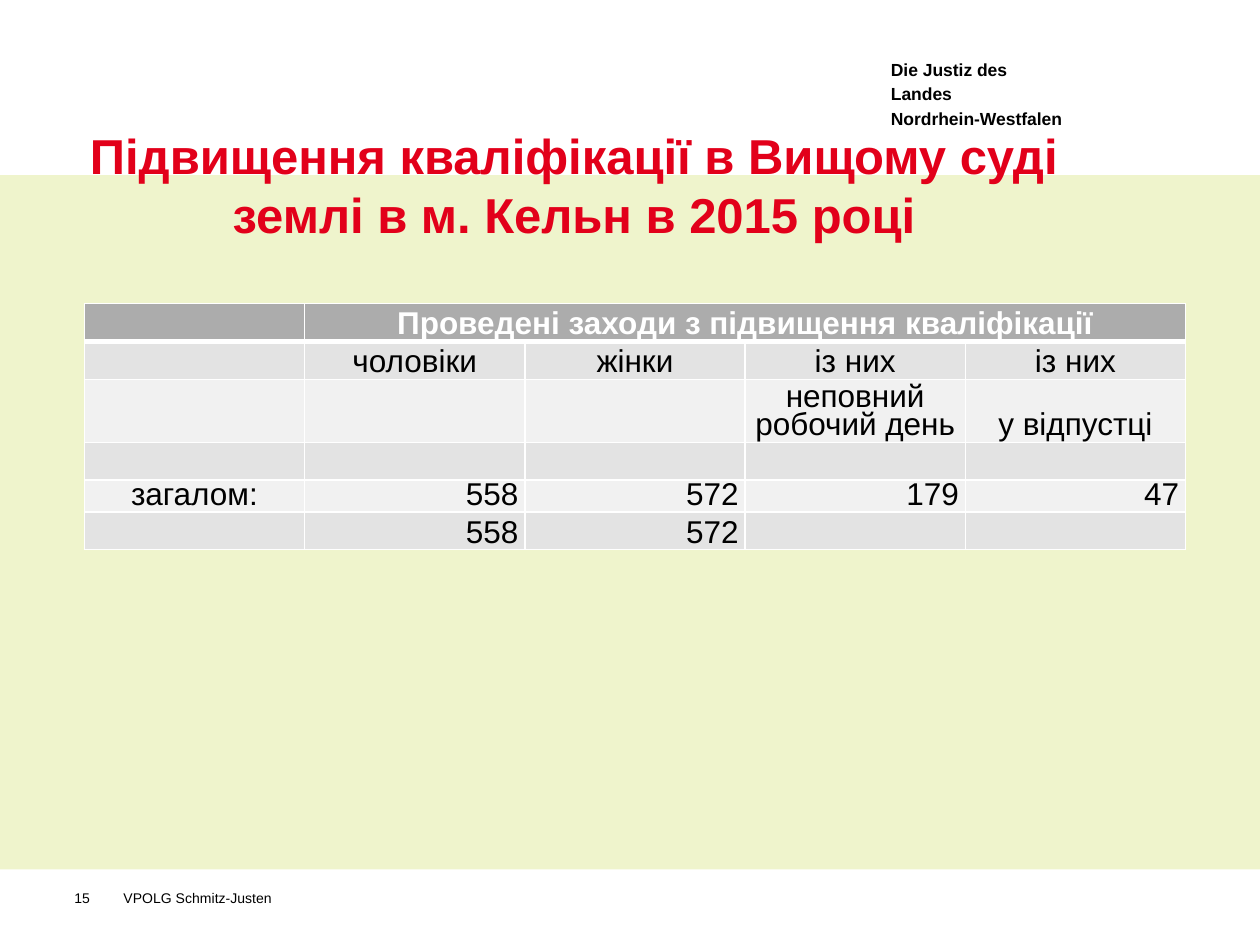
"""Build the slide on training at the Higher Regional Court of Cologne in 2015."""
from lxml import etree
from pptx import Presentation
from pptx import util as u
from pptx.dml.color import RGBColor
from pptx.enum import shapes, text
from pptx.oxml.ns import qn

TITLE = "Підвищення кваліфікації в Вищому суді землі в м. Кельн в 2015 році"
AUTHORITY = ("Die Justiz des Landes", "Nordrhein-Westfalen")
PAGE = "15"
SPEAKER = "VPOLG Schmitz-Justen"
TRAINING = [
    ["", "Проведені заходи з підвищення кваліфікації", "", "", ""],
    ["", "чоловіки", "жінки", "із них", "із них"],
    ["", "", "", "неповний робочий день", "у відпустці"],
    ["", "", "", "", ""],
    ["загалом:", "558", "572", "179", "47"],
    ["", "558", "572", "", ""],
]
ROW_HEIGHTS = [0.71, 0.71, 1.27, 0.71, 0.64, 0.64]
COLUMN_WIDTH = 4.44

FONT = "Arial"
BLACK = RGBColor(0x00, 0x00, 0x00)
WHITE = RGBColor(0xFF, 0xFF, 0xFF)
RED = RGBColor(0xE2, 0x00, 0x1A)
PALE_GREEN = RGBColor(0xEF, 0xF4, 0xCC)
HEADER_GREY = RGBColor(0xAC, 0xAC, 0xAC)
BAND_GREYS = (RGBColor(0xF1, 0xF1, 0xF1), RGBColor(0xE3, 0xE3, 0xE3))


def add_run(paragraph, words, size, color=BLACK, bold=False):
    run = paragraph.add_run()
    run.text = words
    run.font.name = FONT
    run.font.size = u.Pt(size)
    run.font.bold = bold
    run.font.color.rgb = color


def clear_insets(frame):
    frame.margin_left = frame.margin_right = u.Cm(0)
    frame.margin_top = frame.margin_bottom = u.Cm(0)
    frame.word_wrap = True
    frame.vertical_anchor = text.MSO_ANCHOR.TOP


def add_label(slide, place, lines, size, bold=False, spacing=None):
    frame = slide.shapes.add_textbox(*map(u.Cm, place)).text_frame
    clear_insets(frame)
    paragraph = frame.paragraphs[0]
    paragraph.line_spacing = spacing
    for index, line in enumerate(lines):
        if index:
            paragraph.add_line_break()
        add_run(paragraph, line, size, bold=bold)


def set_borders(cell, widths):
    properties = cell._tc.get_or_add_tcPr()
    for side, width in widths.items():
        border = etree.SubElement(properties, qn(f"a:ln{side}"), w=str(u.Pt(width)))
        fill = etree.SubElement(border, qn("a:solidFill"))
        etree.SubElement(fill, qn("a:srgbClr"), val=str(WHITE))


def fill_cell(cell, words, row):
    header = row == 0
    set_borders(cell, {"L": 1, "R": 1, "T": 3 if row == 1 else 1, "B": 3 if header else 1})
    cell.fill.solid()
    cell.fill.fore_color.rgb = HEADER_GREY if header else BAND_GREYS[row % 2]
    cell.margin_left = cell.margin_right = u.Cm(0.13)
    cell.margin_top = cell.margin_bottom = u.Cm(0)
    cell.vertical_anchor = text.MSO_ANCHOR.BOTTOM
    paragraph = cell.text_frame.paragraphs[0]
    paragraph.line_spacing = u.Pt(16)
    paragraph.alignment = text.PP_ALIGN.RIGHT if words.isdigit() else text.PP_ALIGN.CENTER
    if words:
        add_run(paragraph, words, 18, WHITE if header else BLACK, header)


def add_training_table(slide):
    columns = len(TRAINING[0])
    place = (1.7, 6.12, COLUMN_WIDTH * columns, sum(ROW_HEIGHTS))
    table = slide.shapes.add_table(len(TRAINING), columns, *map(u.Cm, place)).table
    table.horz_banding = False
    for column in table.columns:
        column.width = u.Cm(COLUMN_WIDTH)
    for row, (entries, height) in enumerate(zip(TRAINING, ROW_HEIGHTS)):
        table.rows[row].height = u.Cm(height)
        for column, words in enumerate(entries):
            fill_cell(table.cell(row, column), words, row)
    table.cell(0, 1).merge(table.cell(0, columns - 1))


def main():
    deck = Presentation()
    deck.slide_width, deck.slide_height = u.Cm(25.4), u.Cm(19.05)
    slide = deck.slides.add_slide(deck.slide_layouts[5])

    band = slide.shapes.add_shape(
        shapes.MSO_SHAPE.RECTANGLE, u.Cm(0), u.Cm(3.53), deck.slide_width, u.Cm(14))
    band.shadow.inherit = False
    band.fill.solid()
    band.fill.fore_color.rgb = PALE_GREEN
    band.line.fill.background()

    title = slide.shapes.title
    title.left, title.top, title.width, title.height = map(u.Cm, (1.5, 2.51, 20.14, 2.79))
    clear_insets(title.text_frame)
    title.text_frame.auto_size = text.MSO_AUTO_SIZE.NONE
    heading = title.text_frame.paragraphs[0]
    heading.alignment = text.PP_ALIGN.CENTER
    heading.line_spacing = u.Pt(34)
    add_run(heading, TITLE, 28, RED, True)
    band._element.addnext(title._element)

    add_label(slide, (17.96, 1.12, 3.66, 1), AUTHORITY, 10, True, u.Pt(14))
    add_training_table(slide)
    add_label(slide, (1.5, 17.93, 0.81, 0.94), [PAGE], 8)
    add_label(slide, (2.49, 17.93, 5.79, 0.94), [SPEAKER], 8)
    deck.save("out.pptx")


if __name__ == "__main__":
    main()
